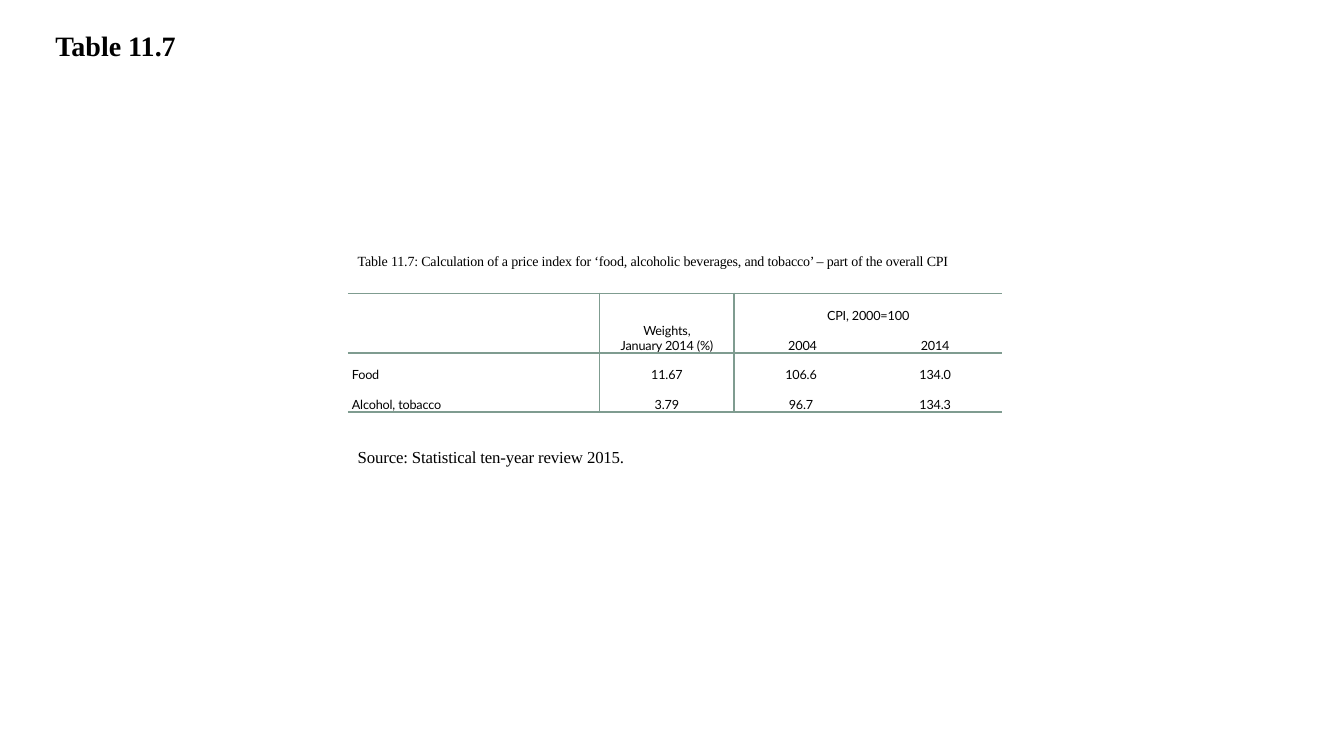
from lxml import etree
from pptx import Presentation
from pptx import util as u
from pptx.dml.color import RGBColor
from pptx.enum import text
from pptx.oxml import ns

HEADINGS = [["", "Weights,\nJanuary 2014 (%)", "CPI, 2000=100", ""],
            ["", "", " 2004", "2014"]]
PRICES = [["Food", "11.67", "106.6", "134.0"],
          ["Alcohol, tobacco", "3.79", "96.7", "134.3"]]
SERIF, SANS = "Times New Roman", "Lato"
LEFT, CENTRE, JUSTIFY = (text.PP_ALIGN.LEFT, text.PP_ALIGN.CENTER,
                         text.PP_ALIGN.JUSTIFY)


def colour(value):
    """Turn a hex string into a colour."""
    return RGBColor.from_string(value)


def write(frame, words, size, font, ink="000000", bold=False, align=LEFT,
          tracking=-10, line=None, before=None, after=None):
    """Fill a text frame, one paragraph per line of words."""
    for index, sentence in enumerate(words.split("\n")):
        paragraph = frame.paragraphs[0] if index == 0 else frame.add_paragraph()
        paragraph.alignment = align
        paragraph.line_spacing = line
        paragraph.space_before = before
        paragraph.space_after = after
        if not sentence:
            etree.SubElement(paragraph._p, ns.qn("a:endParaRPr"),
                             sz=str(size * 100))
            continue
        run = paragraph.add_run()
        run.text = sentence
        run.font.size, run.font.name, run.font.bold = u.Pt(size), font, bold
        run.font.color.rgb = colour(ink)
        run._r.get_or_add_rPr().set("spc", str(tracking))


class IndexSlide:
    """A slide measured in hundredths of its width and height."""

    rule = "7F9C90"

    def __init__(self, deck):
        """Add a blank slide and keep its column and row units."""
        self.slide = deck.slides.add_slide(deck.slide_layouts[6])
        self.column = deck.slide_width / 100
        self.row = deck.slide_height / 100

    def area(self, left, top, width, height):
        """Convert columns and rows to lengths."""
        return (round(left * self.column), round(top * self.row),
                round(width * self.column), round(height * self.row))

    def label(self, place, words, size, **style):
        """Add a wrapped text box."""
        frame = self.slide.shapes.add_textbox(*self.area(*place)).text_frame
        frame.word_wrap = True
        write(frame, words, size, SERIF, **style)

    def border(self, cell, sides):
        """Rule the given sides of a cell and clear the others."""
        properties = cell._tc.get_or_add_tcPr()
        for side, ruled in sides.items():
            edge = etree.SubElement(properties, ns.qn(f"a:ln{side}"),
                                    w=str(u.Pt(1)))
            if ruled:
                paint = etree.SubElement(edge, ns.qn("a:solidFill"))
                etree.SubElement(paint, ns.qn("a:srgbClr"), val=self.rule)
            else:
                etree.SubElement(edge, ns.qn("a:noFill"))

    def table(self, place, widths, rows, merges):
        """Add a ruled table with its labels in the first column."""
        table = self.slide.shapes.add_table(
            len(rows), len(widths), *self.area(*place)).table
        style = table._tbl.tblPr.find(ns.qn("a:tableStyleId"))
        style.text = "{2D5ABB26-0587-4C30-8999-92F81FD0307C}"
        for column, width in zip(table.columns, widths):
            column.width = round(width * self.column)
        for start, end in merges:
            table.cell(*start).merge(table.cell(*end))
        for r, entries in enumerate(rows):
            for c, entry in enumerate(entries):
                cell = table.cell(r, c)
                self.border(cell, {"L": c in (1, 2), "R": c in (0, 1),
                                   "T": r in (0, 2), "B": r in (1, 3)})
                cell.fill.background()
                cell.vertical_anchor = text.MSO_ANCHOR.BOTTOM
                cell.margin_left = u.Inches(0.04)
                cell.margin_right = u.Inches(0.04 if c else 0.35)
                cell.margin_top = cell.margin_bottom = 0
                write(cell.text_frame, entry, 9, SANS,
                      align=CENTRE if c else LEFT)


def main():
    """Build and save the price index slide."""
    deck = Presentation()
    deck.slide_width, deck.slide_height = u.Inches(13.33), u.Inches(7.5)
    page = IndexSlide(deck)
    left = 25.88
    page.table((left, 38.8, 48.69, 15.6), [18.75] + [9.98] * 3,
               HEADINGS + PRICES,
               [((0, 0), (1, 0)), ((0, 1), (1, 1)), ((0, 2), (0, 3))])
    page.label((left, 32.93, 49.96, 3.47),
               "Table 11.7: Calculation of a price index for ‘food, alcoholic "
               "beverages, and tobacco’ – part of the overall CPI", 10,
               align=JUSTIFY, line=u.Pt(11), after=u.Pt(6))
    page.label((left, 58.4, 49.96, 4),
               "Source: Statistical ten-year review 2015.", 12,
               after=u.Pt(14.5))
    page.label((3.38, 3.6, 14.85, 12.93), "Table 11.7", 20,
               bold=True, tracking=0, line=0.9)
    deck.save("out.pptx")


if __name__ == "__main__":
    main()
